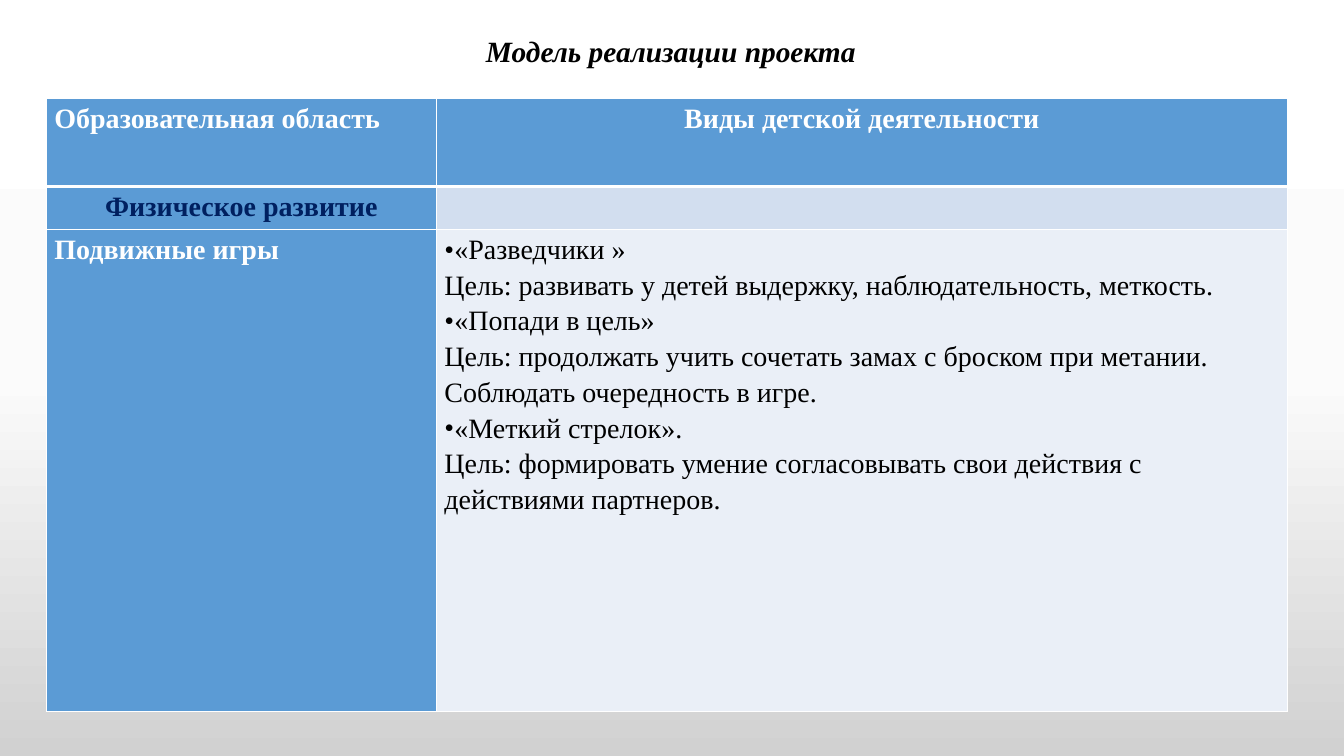
"""Builds the slide with the table of physical development activities."""
import copy
from dataclasses import dataclass

import lxml.etree
import pptx
import pptx.dml.color
import pptx.enum.text
import pptx.oxml
import pptx.oxml.ns
import pptx.util

Cm = pptx.util.Cm
Pt = pptx.util.Pt
qn = pptx.oxml.ns.qn
Align = pptx.enum.text.PP_ALIGN

TITLE = "Модель реализации проекта"
GAMES = [
    ("«Разведчики »", "Цель: развивать у детей выдержку, наблюдательность, меткость."),
    ("«Попади в цель»", "Цель: продолжать учить сочетать замах с броском при метании. "
                        "Соблюдать очередность в игре."),
    ("«Меткий стрелок».", "Цель: формировать умение согласовывать свои действия с "
                          "действиями партнеров."),
]
GAME_LINES = [line for game in GAMES for line in game]


@dataclass(frozen=True)
class Theme:
    font: str = "Times New Roman"
    title_size: int = 21
    table_size: int = 20
    black: str = "000000"
    white: str = "FFFFFF"
    navy: str = "002060"
    blue: str = "5B9BD5"
    band: str = "D2DEEF"
    pale: str = "EAEFF7"
    backdrop: tuple = ((0, "FFFFFF"), (0.5, "FBFBFB"), (1, "D1D1D1"))
    line: float = 1
    header_line: float = 3


THEME = Theme()
ROWS = [
    [(["Образовательная область"], THEME.blue, THEME.white, True, Align.LEFT),
     (["Виды детской деятельности"], THEME.blue, THEME.white, True, Align.CENTER)],
    [(["Физическое развитие"], THEME.blue, THEME.navy, True, Align.CENTER),
     ([], THEME.band, THEME.black, False, Align.LEFT)],
    [(["Подвижные игры"], THEME.blue, THEME.white, True, Align.LEFT),
     (GAME_LINES, THEME.pale, THEME.black, False, Align.LEFT)],
]
TITLE_BOX = (Cm(0.46), Cm(0.71), Cm(32.89), Cm(1.93))
TABLE_LEFT, TABLE_TOP = Cm(1.17), Cm(2.49)
COLUMN_WIDTHS = [Cm(9.83), Cm(21.44)]
ROW_HEIGHTS = [Cm(2.21), Cm(1.09), Cm(12.14)]
SIDE_MARGIN = Cm(0.2)
BULLET_INDENT = Cm(0.25)


def rgb(value):
    return pptx.dml.color.RGBColor.from_string(value)


def style_runs(para, size, color, bold, italic=False):
    for span in para.runs:
        span.font.name = THEME.font
        span.font.size = Pt(size)
        span.font.bold = bold
        span.font.italic = italic
        span.font.color.rgb = rgb(color)


def paint_background(page):
    fill = page.background.fill
    fill.gradient()
    fill.gradient_angle = 270
    stops = page.element.find(".//" + qn("a:gsLst"))
    stops.insert(1, copy.deepcopy(stops[0]))
    for stop, (position, color) in zip(fill.gradient_stops, THEME.backdrop):
        stop.position = position
        stop.color.rgb = rgb(color)


def add_title(page):
    box = page.shapes.title
    box.left, box.top, box.width, box.height = TITLE_BOX
    frame = box.text_frame
    frame.text = TITLE
    frame.word_wrap = True
    frame.auto_size = pptx.enum.text.MSO_AUTO_SIZE.NONE
    frame.vertical_anchor = pptx.enum.text.MSO_ANCHOR.TOP
    para = frame.paragraphs[0]
    para.alignment = Align.CENTER
    style_runs(para, THEME.title_size, THEME.black, True, True)


def set_borders(cell, top, bottom):
    properties = cell._tc.get_or_add_tcPr()
    sides = {"lnL": THEME.line, "lnR": THEME.line, "lnT": top, "lnB": bottom}
    for side, width in sides.items():
        line = lxml.etree.SubElement(properties, qn("a:" + side), w=str(Pt(width)))
        solid = lxml.etree.SubElement(line, qn("a:solidFill"))
        lxml.etree.SubElement(solid, qn("a:srgbClr"), val=THEME.white)


def add_bullet(para):
    properties = para._p.get_or_add_pPr()
    properties.set("marL", str(BULLET_INDENT))
    properties.set("indent", str(-BULLET_INDENT))
    lxml.etree.SubElement(properties, qn("a:buFont"), typeface=THEME.font)
    lxml.etree.SubElement(properties, qn("a:buChar"), char="•")


def fill_cell(cell, lines, fill, color, bold, alignment):
    cell.fill.solid()
    cell.fill.fore_color.rgb = rgb(fill)
    cell.margin_left = cell.margin_right = SIDE_MARGIN
    cell.margin_top = cell.margin_bottom = 0
    cell.text_frame.text = "\n".join(lines)
    for para in cell.text_frame.paragraphs:
        para.alignment = alignment
        para.line_spacing = 1.15
        style_runs(para, THEME.table_size, color, bold)
        if para.text.startswith("«"):
            add_bullet(para)


def add_activity_table(page):
    table = page.shapes.add_table(
        len(ROWS), len(COLUMN_WIDTHS), TABLE_LEFT, TABLE_TOP,
        sum(COLUMN_WIDTHS), sum(ROW_HEIGHTS)).table
    for column, width in zip(table.columns, COLUMN_WIDTHS):
        column.width = width
    for index, (row, height) in enumerate(zip(table.rows, ROW_HEIGHTS)):
        row.height = height
        top = THEME.header_line if index == 1 else THEME.line
        bottom = THEME.header_line if index == 0 else THEME.line
        for cell, content in zip(row.cells, ROWS[index]):
            set_borders(cell, top, bottom)
            fill_cell(cell, *content)


def main():
    deck = pptx.Presentation()
    deck.slide_width, deck.slide_height = Cm(33.87), Cm(19.05)
    page = deck.slides.add_slide(deck.slide_layouts[5])
    paint_background(page)
    add_title(page)
    add_activity_table(page)
    deck.save("out.pptx")


if __name__ == "__main__":
    main()
